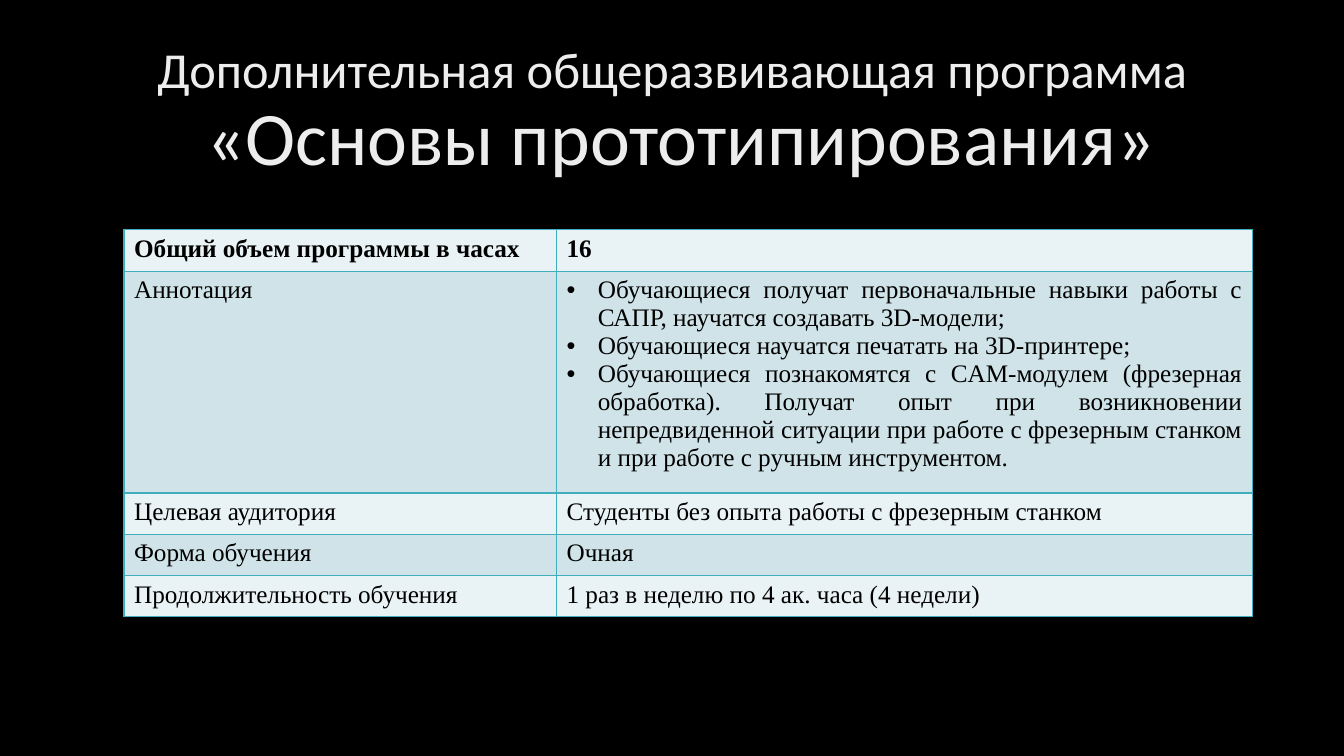
from dataclasses import dataclass

from lxml.etree import SubElement
from pptx import Presentation
from pptx.dml.color import RGBColor
from pptx.enum.text import MSO_ANCHOR, PP_ALIGN
from pptx.oxml import parse_xml
from pptx.oxml.ns import nsdecls, qn
from pptx.util import Inches, Pt


@dataclass(frozen=True)
class Theme:
    background: str = "000000"
    title: str = "EDEDED"
    body: str = "000000"
    bands: tuple = ("E9F2F4", "CFE3E8")
    border: str = "41AEBD"
    title_font: str = "Calibri"
    body_font: str = "Times New Roman"
    intro_size: int = 36
    name_size: int = 54
    body_size: int = 18


PROGRAM = [
    ("Общий объем программы в часах", "16"),
    ("Аннотация", [
        "Обучающиеся получат первоначальные навыки работы с САПР, "
        "научатся создавать 3D-модели;",
        "Обучающиеся научатся печатать на 3D-принтере;",
        "Обучающиеся познакомятся с CAM-модулем (фрезерная обработка). "
        "Получат опыт при возникновении непредвиденной ситуации при работе "
        "с фрезерным станком и при работе с ручным инструментом.",
    ]),
    ("Целевая аудитория", "Студенты без опыта работы с фрезерным станком"),
    ("Форма обучения", "Очная"),
    ("Продолжительность обучения", "1 раз в неделю по 4 ак. часа (4 недели)"),
]


class ProgramSlide:
    def __init__(self, presentation, theme):
        self.theme = theme
        self.slide = presentation.slides.add_slide(presentation.slide_layouts[6])
        background = self.slide.background.fill
        background.solid()
        background.fore_color.rgb = RGBColor.from_string(theme.background)

    def style(self, font, name, size, color, bold=False):
        font.name = name
        font.size = Pt(size)
        font.bold = bold
        font.color.rgb = RGBColor.from_string(color)

    def title(self, intro, program_name, left, top, width, height):
        heading = self.slide.shapes.add_textbox(
            Inches(left), Inches(top), Inches(width), Inches(height)).text_frame
        heading.word_wrap = True
        heading.vertical_anchor = MSO_ANCHOR.MIDDLE
        paragraph = heading.paragraphs[0]
        paragraph.text = f"{intro}\v {program_name}"
        paragraph.alignment = PP_ALIGN.CENTER
        paragraph.line_spacing = 0.9
        sizes = (self.theme.intro_size, self.theme.name_size)
        for run, size in zip(paragraph.runs, sizes):
            self.style(run.font, self.theme.title_font, size, self.theme.title)

    def table(self, rows, left, top, widths, heights):
        table = self.slide.shapes.add_table(
            len(rows), len(widths), Inches(left), Inches(top),
            Inches(sum(widths)), Inches(sum(heights))).table
        table.first_row = table.horz_banding = False
        for column, width in zip(table.columns, widths):
            column.width = Inches(width)
        for index, (entries, height) in enumerate(zip(rows, heights)):
            table.rows[index].height = Inches(height)
            band = self.theme.bands[index % 2]
            for column, content in enumerate(entries):
                self.cell(table.cell(index, column), content, band, index == 0)

    def cell(self, cell, content, band, bold):
        cell.fill.solid()
        cell.fill.fore_color.rgb = RGBColor.from_string(band)
        self.borders(cell)
        bulleted = isinstance(content, list)
        cell.text_frame.text = "\n".join(content) if bulleted else content
        for paragraph in cell.text_frame.paragraphs:
            if bulleted:
                self.bullet(paragraph)
            for run in paragraph.runs:
                self.style(run.font, self.theme.body_font, self.theme.body_size,
                           self.theme.body, bold)

    def bullet(self, paragraph):
        paragraph.alignment = PP_ALIGN.JUSTIFY
        properties = paragraph._p.get_or_add_pPr()
        indent = Inches(0.31)
        properties.set("marL", str(indent))
        properties.set("indent", str(-indent))
        SubElement(properties, qn("a:buFont"), typeface="Arial")
        SubElement(properties, qn("a:buChar"), char="•")

    def borders(self, cell):
        properties = cell._tc.get_or_add_tcPr()
        for position, side in enumerate(("lnL", "lnR", "lnT", "lnB")):
            properties.insert(position, parse_xml(
                f'<a:{side} {nsdecls("a")} w="{Pt(1)}"><a:solidFill>'
                f'<a:srgbClr val="{self.theme.border}"/></a:solidFill></a:{side}>'))


def main():
    presentation = Presentation()
    presentation.slide_width = Inches(13.33)
    presentation.slide_height = Inches(7.5)
    page = ProgramSlide(presentation, Theme())
    page.title("Дополнительная общеразвивающая программа",
               "«Основы прототипирования»", 0.92, 0.4, 11.5, 1.45)
    page.table(PROGRAM, 1.23, 2.28, (4.29, 6.9), (0.41, 2.04, 0.41, 0.41, 0.41))
    presentation.save("out.pptx")


if __name__ == "__main__":
    main()
